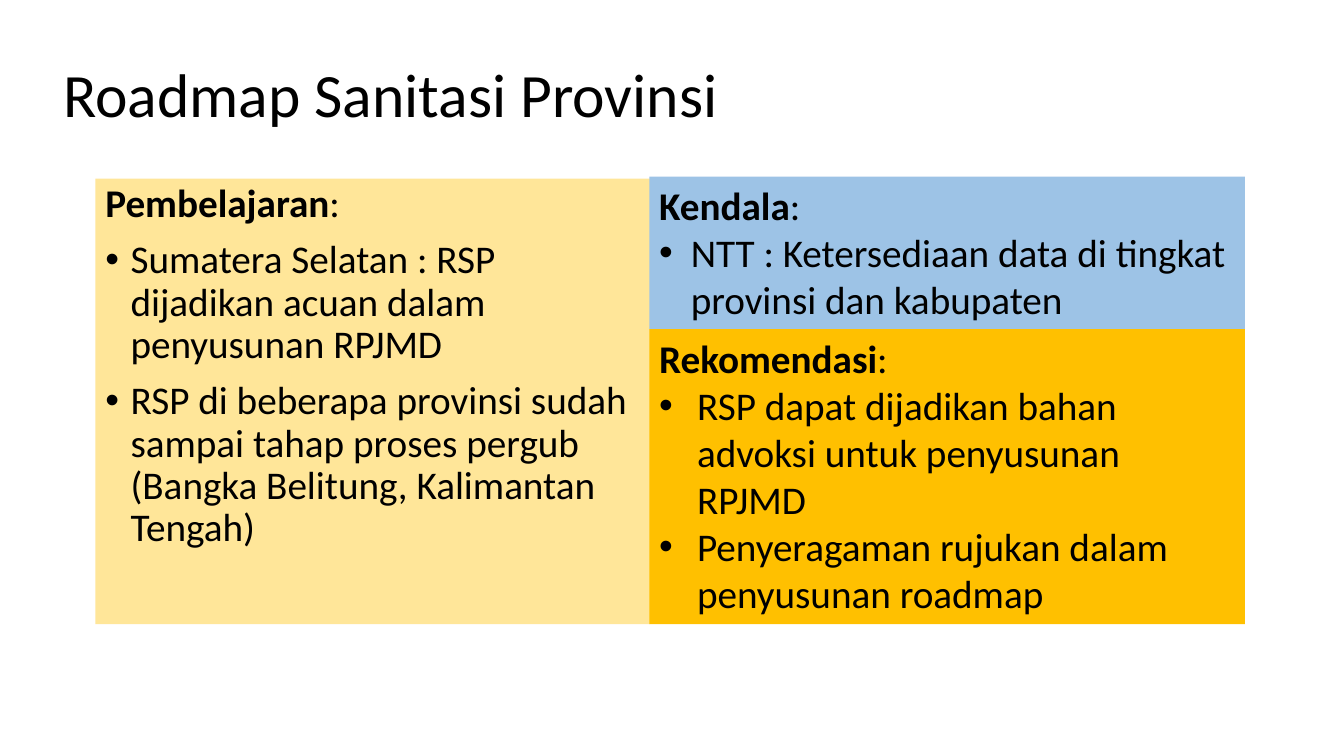
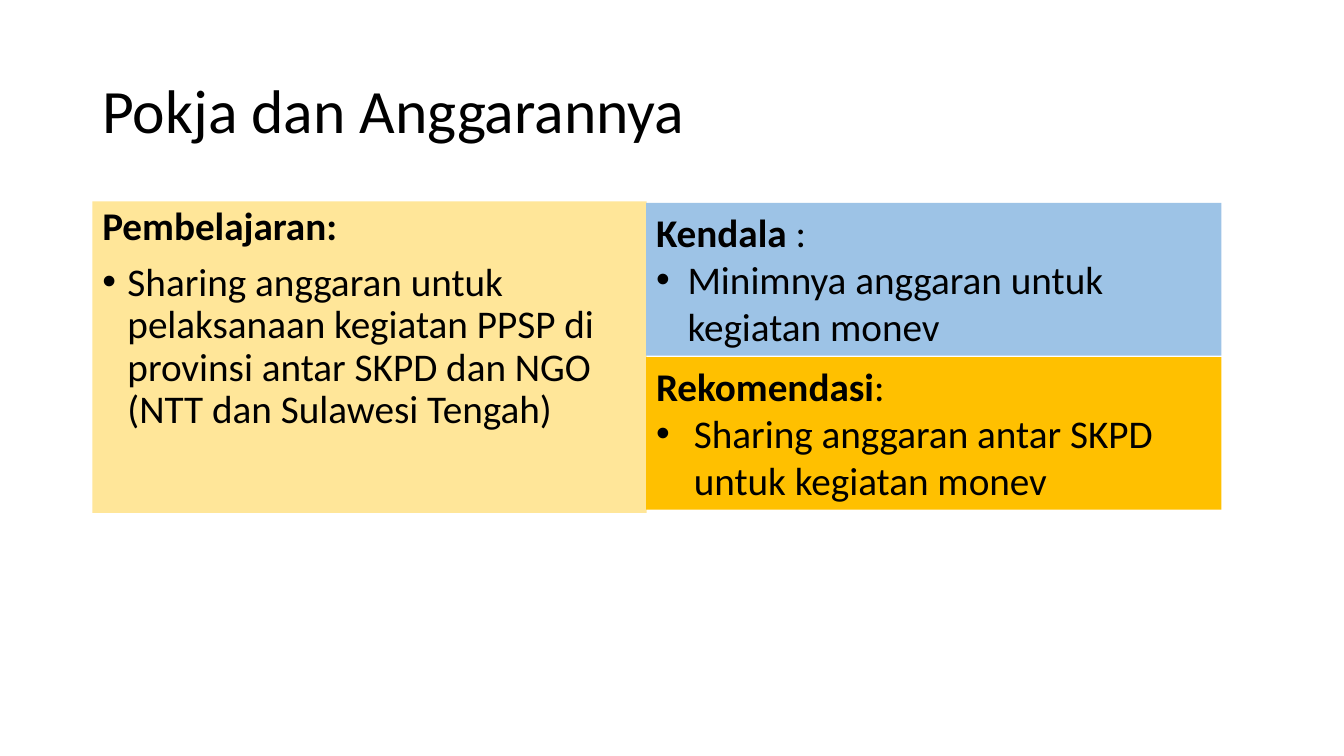
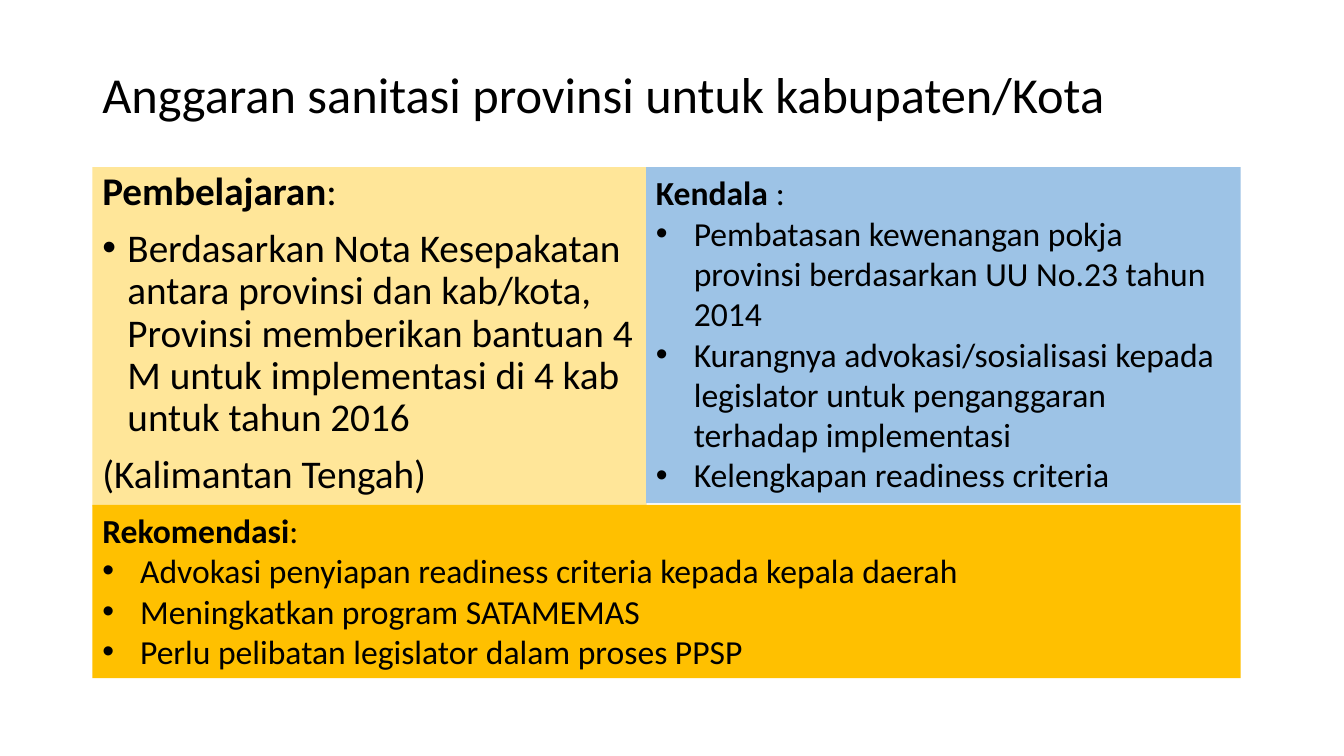
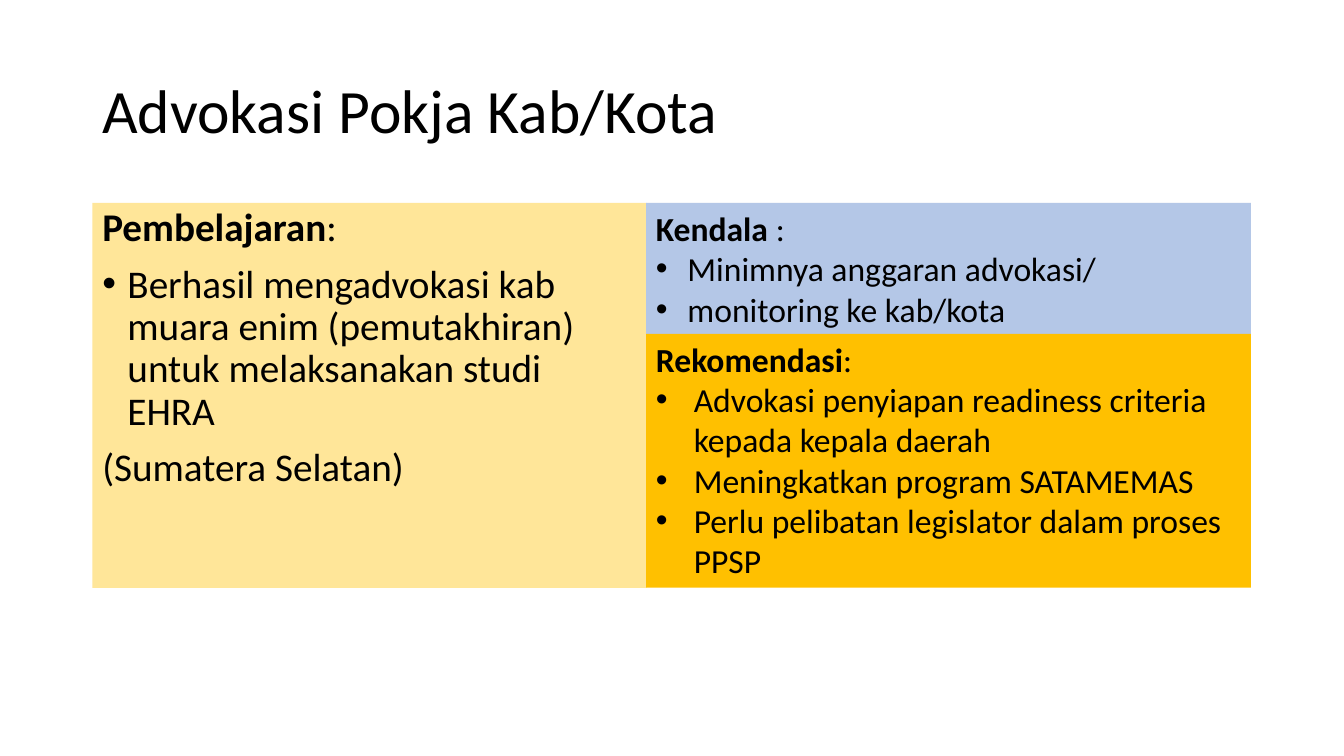
from pptx import Presentation
from pptx.dml.color import RGBColor
from pptx.enum.shapes import MSO_SHAPE as Shape
from pptx.enum.text import MSO_ANCHOR as Anchor, PP_ALIGN as Align
from pptx.oxml.ns import qn
from pptx.util import Pt
from lxml.etree import SubElement

FONT = "Calibri"
BLACK = "000000"
CREAM = "FFE699"
BLUE = "9DC3E6"
PALE = "B4C7E7"
GOLD = "FFC000"

WIDTH = 396    # left panel
LEFT = 66
RIGHT = 461.5
TIGHT = dict(line=0.9, gap=10, hang=18)


def color(code):
    return RGBColor.from_string(code)


def add_run(para, text, size, bold=False):
    run = para.add_run()
    run.text = text
    font = run.font
    font.name, font.size, font.bold = FONT, Pt(size), bold
    font.color.rgb = color(BLACK)


def add_bullet(para, hang):
    props = para._p.get_or_add_pPr()
    props.set("marL", str(Pt(hang)))
    props.set("indent", str(-Pt(hang)))
    SubElement(props, qn("a:buFont")).set("typeface", "Arial")
    SubElement(props, qn("a:buChar")).set("char", "•")


def add_title(slide, text, left=LEFT, top=29, height=104.4, size=44):
    box = slide.shapes.add_textbox(Pt(left), Pt(top), Pt(828), Pt(height))
    frame = box.text_frame
    frame.word_wrap = True
    frame.vertical_anchor = Anchor.MIDDLE
    para = frame.paragraphs[0]
    para.line_spacing = 0.9
    add_run(para, text, size)


def add_panel(slide, area, fill, head, items, note=None,
              size=28, line=1.0, gap=0, hang=27):
    """Filled box: head is (bold, plain), items get bullets, note does not."""
    box = slide.shapes.add_shape(Shape.RECTANGLE, *map(Pt, area))
    box.shadow.inherit = False
    box.fill.solid()
    box.fill.fore_color.rgb = color(fill)
    box.line.fill.background()
    frame = box.text_frame
    frame.word_wrap = True
    frame.vertical_anchor = Anchor.TOP

    def style(para):
        para.alignment = Align.LEFT
        para.line_spacing = line
        para.space_before = Pt(gap)
        return para

    para = style(frame.paragraphs[0])
    bold, plain = head
    add_run(para, bold, size, True)
    if plain:
        add_run(para, plain, size)
    for item in items:
        para = style(frame.add_paragraph())
        add_bullet(para, hang)
        add_run(para, item, size)
    if note:
        add_run(style(frame.add_paragraph()), note, size)


def add_lesson(slide, top, height, items, left=LEFT, note=None,
               head=("Pembelajaran", ":")):
    add_panel(slide, (left, top, WIDTH, height), CREAM, head, items, note,
              **TIGHT)


def add_issue(slide, area, items, head=("Kendala ", ":"), fill=BLUE,
              size=28, hang=22.5):
    add_panel(slide, area, fill, head, items, size=size, hang=hang)


def add_advice(slide, area, items, size=28):
    add_panel(slide, area, GOLD, ("Rekomendasi", ":"), items, size=size)


def main():
    deck = Presentation()
    deck.slide_width, deck.slide_height = Pt(960), Pt(540)
    blank = deck.slide_layouts[6]
    steps = ["Advokasi penyiapan readiness criteria kepada kepala daerah",
             "Meningkatkan program SATAMEMAS",
             "Perlu pelibatan legislator dalam proses PPSP"]

    slide = deck.slides.add_slide(blank)
    add_title(slide, "Roadmap Sanitasi Provinsi", left=38.2, top=17.3)
    add_lesson(slide, 127.6, 318.2, [
        "Sumatera Selatan : RSP dijadikan acuan dalam penyusunan RPJMD",
        "RSP di beberapa provinsi sudah sampai tahap proses pergub "
        "(Bangka Belitung, Kalimantan Tengah)"], left=68.2)
    add_issue(slide, (463.8, 126.2, 425.4, 109), [
        "NTT : Ketersediaan data di tingkat provinsi dan kabupaten"],
        head=("Kendala", ":"))
    add_advice(slide, (463.8, 235.2, 425.4, 210.6), [
        "RSP dapat dijadikan bahan advoksi untuk penyusunan RPJMD",
        "Penyeragaman rujukan dalam penyusunan roadmap"])

    slide = deck.slides.add_slide(blank)
    add_title(slide, "Pokja dan Anggarannya")
    add_lesson(slide, 143.8, 222.5, [
        "Sharing anggaran untuk pelaksanaan kegiatan PPSP di provinsi "
        "antar SKPD dan NGO (NTT dan Sulawesi Tengah)"],
        head=("Pembelajaran:", ""))
    add_issue(slide, (RIGHT, 145, 411, 109), [
        "Minimnya anggaran untuk kegiatan monev"])
    add_advice(slide, (RIGHT, 255, 411, 109), [
        "Sharing anggaran antar SKPD untuk kegiatan monev"])

    slide = deck.slides.add_slide(blank)
    add_title(slide, "Anggaran sanitasi provinsi untuk kabupaten/Kota",
              height=80.6, size=36)
    add_lesson(slide, 119.4, 242.6, [
        "Berdasarkan Nota Kesepakatan antara provinsi dan kab/kota, "
        "Provinsi memberikan bantuan 4 M untuk implementasi di 4 kab "
        "untuk tahun 2016"], note="(Kalimantan Tengah)")
    add_issue(slide, (RIGHT, 119.4, 424.8, 240), [
        "Pembatasan kewenangan pokja provinsi berdasarkan UU No.23 "
        "tahun 2014",
        "Kurangnya advokasi/sosialisasi kepada legislator untuk "
        "penganggaran terhadap implementasi",
        "Kelengkapan readiness criteria"], size=24, hang=27)
    add_advice(slide, (LEFT, 360.6, 820.3, 123.8), steps, size=24)

    slide = deck.slides.add_slide(blank)
    add_title(slide, "Advokasi Pokja Kab/Kota")
    add_lesson(slide, 145, 275, [
        "Berhasil mengadvokasi kab muara enim (pemutakhiran) untuk "
        "melaksanakan studi EHRA"], note="(Sumatera Selatan)")
    add_issue(slide, (RIGHT, 145, 432, 94), [
        "Minimnya anggaran advokasi/",
        "monitoring ke kab/kota"], fill=PALE, size=24)
    add_advice(slide, (RIGHT, 238.4, 432, 181.4), steps, size=24)

    deck.save("out.pptx")


if __name__ == "__main__":
    main()
